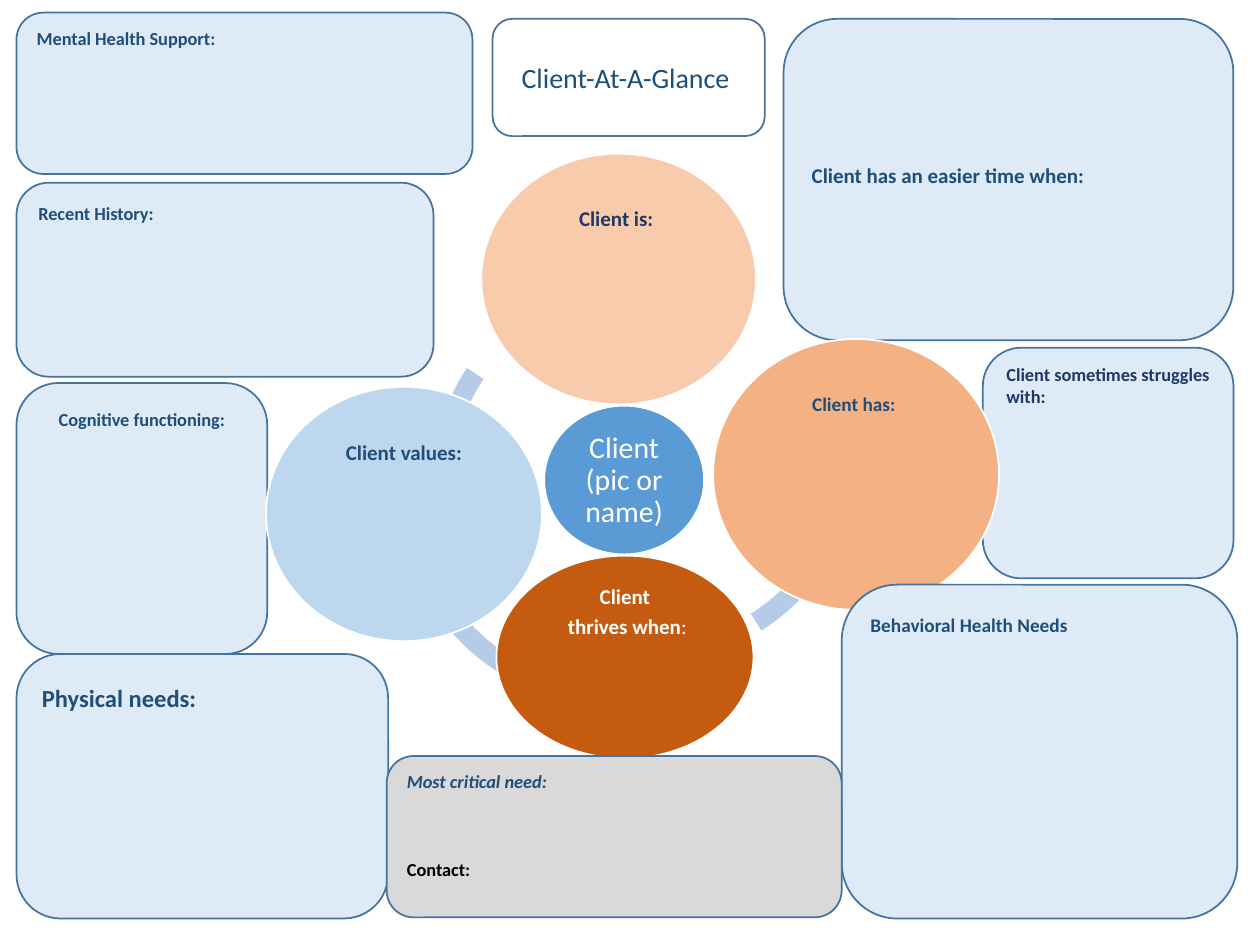
"""Build the Client-At-A-Glance slide."""
from pptx import Presentation
from pptx.dml.color import RGBColor
from pptx.enum.shapes import MSO_SHAPE as Geo
from pptx.enum.text import MSO_ANCHOR as Anchor, MSO_AUTO_SIZE as Auto, PP_ALIGN as Align
from pptx.util import Pt

THEME = {
    "font": "Calibri",
    "navy": "1F4E79", "ink": "203864", "black": "000000", "white": "FFFFFF",
    "pale": "DEEBF7", "gray": "D9D9D9", "edge": "43739E", "ring": "B5CBE7",
    "hub": "5B9BD5", "peach": "F8CBAD", "amber": "F4B183",
    "rust": "C55A11", "sky": "BDD7EE",
    "small": 10.5, "note": 11, "text": 12, "large": 14, "title": 16, "hubsize": 17,
}

TITLE = ("Client-At-A-Glance ", (281.5, 10.8, 155.5, 67))

BACK = [
    ("Cognitive functioning:", (9.4, 218.9, 143.3, 154.8), "small", "navy", 7.4, Align.CENTER),
    ("Client sometimes struggles with:", (561.6, 198.7, 143.3, 131.8), "small", "ink", 2.5, Align.LEFT),
    ("Client has an easier time when:", (447.8, 10.8, 257, 183.6), "text", "navy", 73.2, Align.LEFT),
    ("Mental Health Support:", (9.4, 7.2, 260.6, 92.2), "small", "navy", 3.9, Align.LEFT),
]

FRONT = [
    ("Physical needs:", (9.4, 373.7, 212.4, 151.2), "large", "navy", 9.4, Align.LEFT),
    ("Behavioral Health Needs", (481, 334.1, 226, 190.8), "note", "navy", 7.3, Align.LEFT),
    ("Recent History:", (9.4, 104.4, 238.3, 110.9), "small", "navy", 5.8, Align.LEFT),
]

NEED = ("Most critical need:\nContact:", (221, 432, 260, 92.2), "small", "navy", 3.7, Align.LEFT)

RING = 246.2
ARCS = [
    (227.5, 157, 103.96, 162.85),
    (222.5, 133.2, 50.71, 97.07),
    (246.2, 133.2, 4.12, 57.69),
    (246.2, 155.5, 157.53, 213.71),
]

HUB = ("Client (pic or name)", (311, 231.8, 91.4, 85), "hub", "hubsize", "white", 1.4)
DISCS = [
    ("Client is: ", (275, 87.8, 157, 143.3), "peach", "text", "ink", 10.2),
    ("Client has: ", (407.5, 193.7, 163.4, 154.8), "amber", "note", "navy", 9.3),
    ("Client\n thrives when:", (283.7, 317.5, 146.9, 115.9), "rust", "text", "white", 0.5),
    ("Client values:", (152, 221, 157.7, 145.4), "sky", "text", "navy", 10.5),
]


def tone(name):
    return RGBColor.from_string(THEME[name])


def draw(slide, geo, box, fill, edge=None):
    shape = slide.shapes.add_shape(geo, *map(Pt, box))
    shape.shadow.inherit = False
    shape.fill.solid()
    shape.fill.fore_color.rgb = tone(fill)
    if edge:
        shape.line.color.rgb = tone(edge)
        shape.line.width = Pt(1)
    else:
        shape.line.fill.background()
    return shape


def style(run, size, color, bold=True):
    run.font.name = THEME["font"]
    run.font.size = Pt(THEME[size])
    run.font.color.rgb = tone(color)
    run.font.bold = bold


def write(shape, text, size, color, top, align, side=7.2, bold=True):
    frame = shape.text_frame
    frame.text = text
    frame.word_wrap = True
    frame.vertical_anchor = Anchor.TOP
    frame.margin_left = frame.margin_right = Pt(side)
    frame.margin_top, frame.margin_bottom = Pt(top), Pt(0)
    for para in frame.paragraphs:
        para.alignment = align
        for run in para.runs:
            style(run, size, color, bold)
    return frame


def card(slide, text, box, size, color, top, align, fill="pale"):
    return write(draw(slide, Geo.ROUNDED_RECTANGLE, box, fill, "edge"),
                 text, size, color, top, align)


def disc(slide, text, box, fill, size, color, top, bold=True):
    shape = draw(slide, Geo.OVAL, box, fill, "white")
    frame = write(shape, text, size, color, top, Align.CENTER, 1.4, bold)
    for para in frame.paragraphs:
        para.line_spacing = 0.9
        para.space_after = Pt(4.2)
    return frame


def main():
    deck = Presentation()
    deck.slide_width, deck.slide_height = Pt(720), Pt(540)
    slide = deck.slides.add_slide(deck.slide_layouts[5])

    for item in BACK:
        card(slide, *item)
    for left, top, start, end in ARCS:
        arc = draw(slide, Geo.BLOCK_ARC, (left, top, RING, RING), "ring")
        for spot, value in enumerate((start * 0.6, end * 0.6, 0.046)):
            arc.adjustments[spot] = value

    hub = disc(slide, *HUB, bold=False)
    hub.vertical_anchor = Anchor.MIDDLE
    hub.paragraphs[0].space_after = Pt(0)
    frames = [disc(slide, *item) for item in DISCS]
    last = frames[2].paragraphs[1]
    last.runs[0].text = last.text.rstrip(":")
    colon = last.add_run()
    colon.text = ":"
    style(colon, "text", "white", False)

    for item in FRONT:
        card(slide, *item)
    need, contact = card(slide, *NEED, fill="gray").paragraphs
    need.runs[0].font.italic = True
    contact.space_before = Pt(37.4)
    style(contact.runs[0], "small", "black")

    text, box = TITLE
    draw(slide, Geo.ROUNDED_RECTANGLE, box, "white", "edge")
    title = slide.shapes.title
    title.left, title.top, title.width, title.height = map(Pt, box)
    frame = write(title, text, "title", "navy", 0, Align.CENTER, bold=False)
    frame.vertical_anchor = Anchor.MIDDLE
    frame.auto_size = Auto.NONE
    slide.shapes.element.append(title.element)
    deck.save("out.pptx")


if __name__ == "__main__":
    main()
